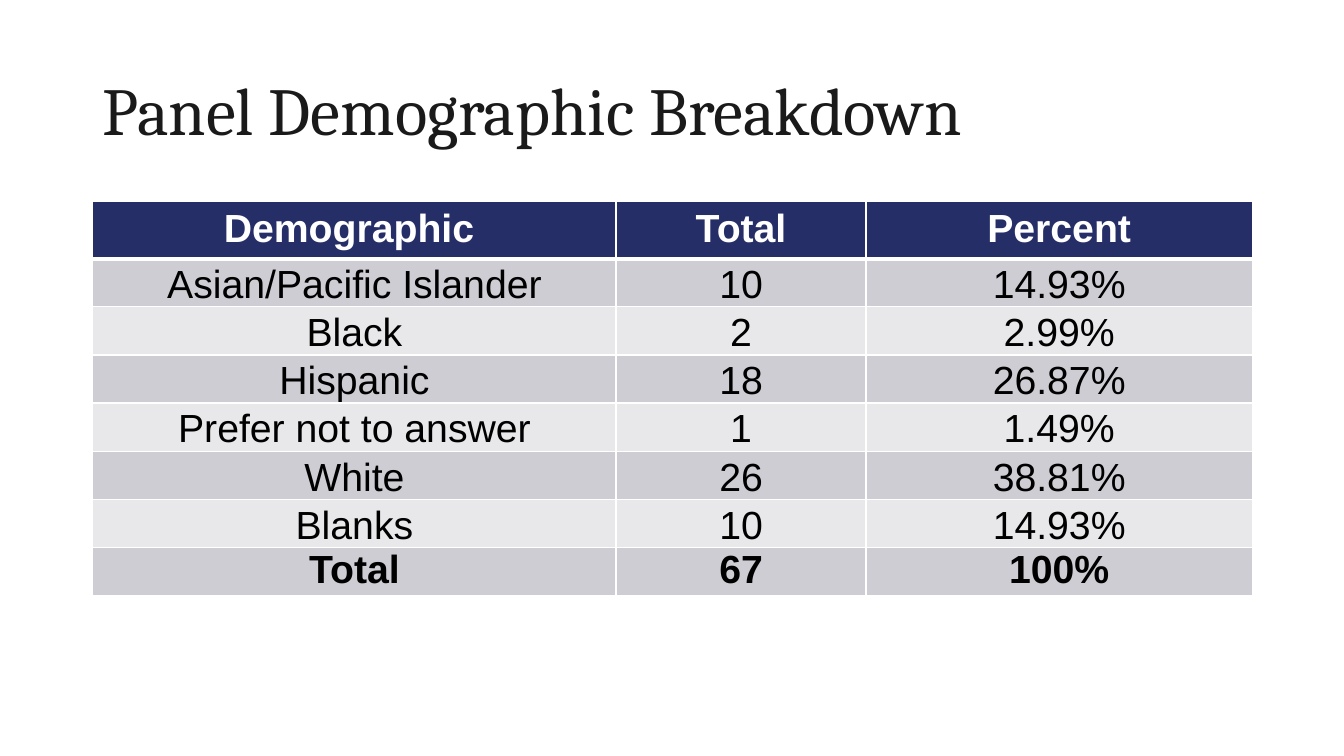
"""Build the panel demographic breakdown slide."""
from lxml import etree
from pptx import Presentation
from pptx import util as u
from pptx.dml.color import RGBColor
from pptx.enum import text
from pptx.oxml.ns import qn

TITLE = "Panel Demographic Breakdown"
ROWS = [
    ("Demographic ", "Total", "Percent"),
    ("Asian/Pacific Islander", "10", "14.93%"),
    ("Black", "2", "2.99%"),
    ("Hispanic", "18", "26.87%"),
    ("Prefer not to answer", "1", "1.49%"),
    ("White", "26", "38.81%"),
    ("Blanks", "10", "14.93%"),
    ("Total", "67", "100%"),
]
COLUMN_WIDTHS = (5.19, 2.48, 3.83)
HEADER_HEIGHT, ROW_HEIGHT = 0.52, 0.44
LEFT, TITLE_TOP, TITLE_HEIGHT, TABLE_TOP = 0.92, 0.4, 1.45, 2
WIDTH = sum(COLUMN_WIDTHS)

NAVY = RGBColor(0x26, 0x2E, 0x67)
BANDS = (RGBColor(0xE8, 0xE8, 0xEB), RGBColor(0xCD, 0xCD, 0xD3))
WHITE = RGBColor(0xFF, 0xFF, 0xFF)
BLACK = RGBColor(0, 0, 0)
CHARCOAL = RGBColor(0x1A, 0x1A, 0x1A)


def style_font(paragraph, name, size, color, bold=False):
    font = paragraph.runs[0].font
    font.name, font.size, font.bold = name, u.Pt(size), bold
    font.color.rgb = color


def add_borders(cell, widths):
    properties = cell._tc.get_or_add_tcPr()
    for position, (side, points) in enumerate(widths.items()):
        line = etree.Element(qn(f"a:ln{side}"), w=str(u.Pt(points)))
        fill = etree.SubElement(line, qn("a:solidFill"))
        etree.SubElement(fill, qn("a:srgbClr"), val=str(WHITE))
        properties.insert(position, line)


def add_title(slide):
    box = slide.shapes.add_textbox(
        *map(u.Inches, (LEFT, TITLE_TOP, WIDTH, TITLE_HEIGHT)))
    frame = box.text_frame
    frame.word_wrap = True
    frame.vertical_anchor = text.MSO_ANCHOR.MIDDLE
    frame.text = TITLE
    paragraph = frame.paragraphs[0]
    paragraph.line_spacing = 0.9
    style_font(paragraph, "Cambria", 48, CHARCOAL)


def fill_cell(cell, content, row):
    header, last = row == 0, row == len(ROWS) - 1
    cell.text = content
    paragraph = cell.text_frame.paragraphs[0]
    paragraph.alignment = text.PP_ALIGN.CENTER
    style_font(paragraph, "Arial", 28, WHITE if header else BLACK, header or last)
    if not header:
        cell.margin_left = cell.margin_right = cell.margin_top = u.Inches(0.01)
        cell.margin_bottom = 0
        if not last:
            cell.vertical_anchor = text.MSO_ANCHOR.BOTTOM
    cell.fill.solid()
    cell.fill.fore_color.rgb = NAVY if header else BANDS[row % 2]
    add_borders(cell, {"L": 1, "R": 1, "T": 3 if row == 1 else 1,
                       "B": 3 if header else 1})


def add_demographics(slide):
    heights = [HEADER_HEIGHT] + [ROW_HEIGHT] * (len(ROWS) - 1)
    table = slide.shapes.add_table(
        len(ROWS), len(COLUMN_WIDTHS),
        *map(u.Inches, (LEFT, TABLE_TOP, WIDTH, sum(heights)))).table
    for column, width in zip(table.columns, COLUMN_WIDTHS):
        column.width = u.Inches(width)
    for row, (height, contents) in enumerate(zip(heights, ROWS)):
        table.rows[row].height = u.Inches(height)
        for column, content in enumerate(contents):
            fill_cell(table.cell(row, column), content, row)


def main():
    presentation = Presentation()
    presentation.slide_width = u.Inches(13.33)
    presentation.slide_height = u.Inches(7.5)
    slide = presentation.slides.add_slide(presentation.slide_layouts[6])
    add_title(slide)
    add_demographics(slide)
    presentation.save("out.pptx")


if __name__ == "__main__":
    main()
